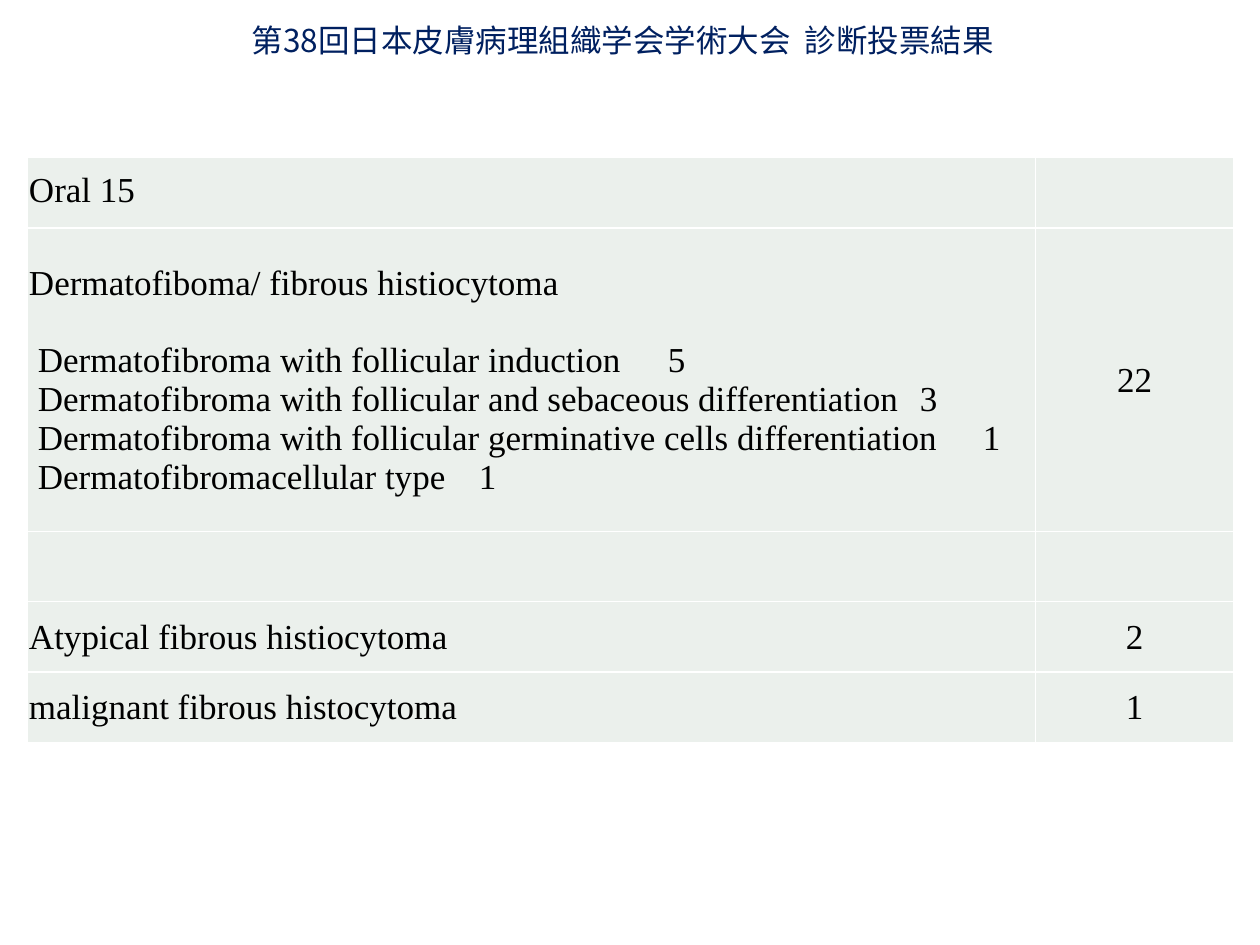
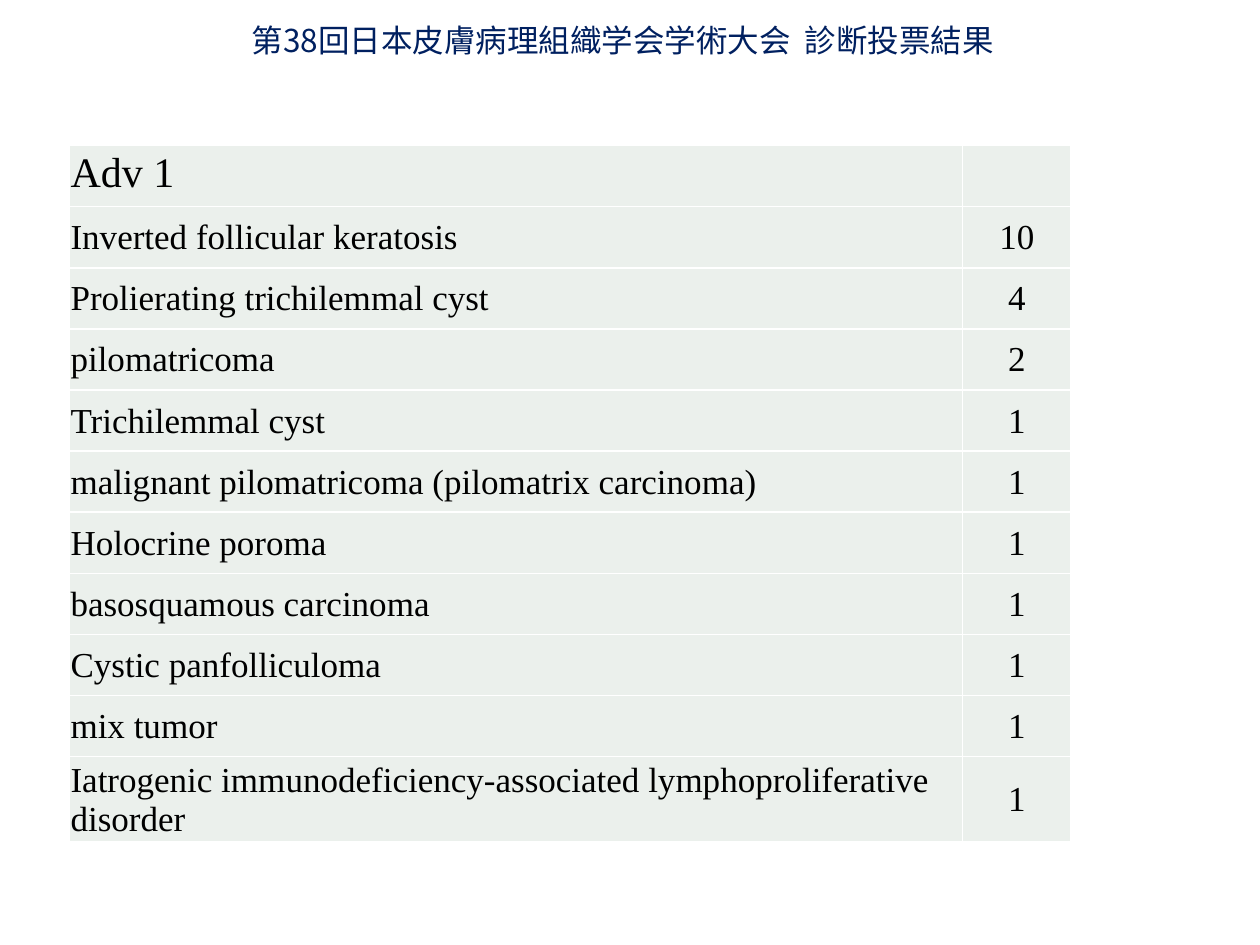
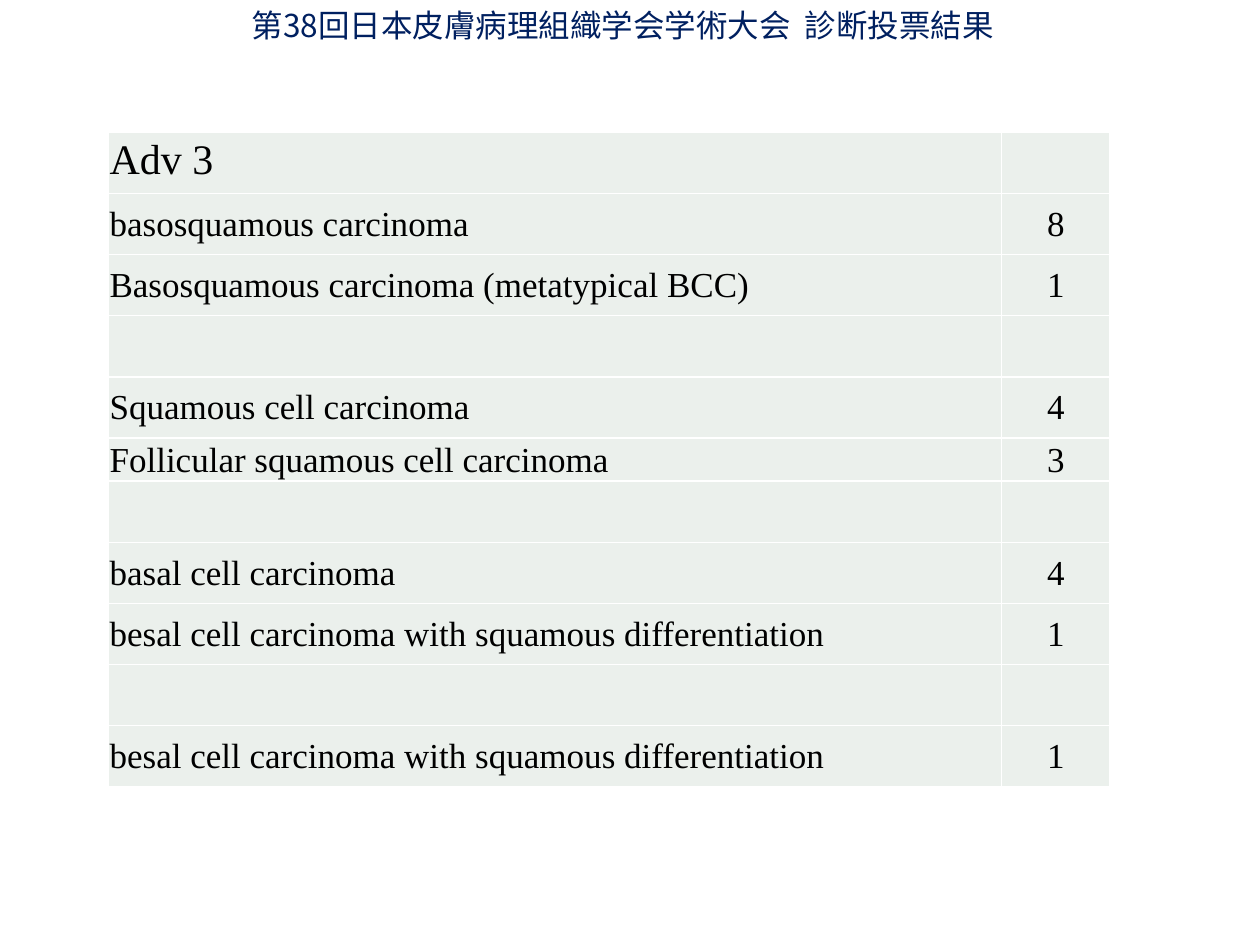
"""Builds the voting result slides: one shared title and one table per case."""
from dataclasses import dataclass

import pptx
import pptx.dml.color
import pptx.enum.text
import pptx.oxml
import pptx.oxml.ns
import pptx.util

COLORS = {"title": "002060", "text": "000000", "cell": "EBF0EC", "border": "FFFFFF"}
TITLE = "第38回日本皮膚病理組織学会学術大会  診断投票結果"
TITLE_FONT, TABLE_FONT = "Noto Sans CJK JP", "Times New Roman"
SLIDE_WIDTH, SLIDE_HEIGHT = pptx.util.Inches(10), pptx.util.Inches(7.5)
GRID = 100
BODY_SIZE = 20
SUBTYPE_GAP = 22
SUBTYPE_INDENT = 0.7
SUBTYPE_COUNT_STOP = 75.3
CELL_MARGIN = 0.1


@dataclass
class Diagnosis:
    name: str = ""
    votes: str = ""
    height: float = 6.47
    subtypes: tuple[tuple[str, int], ...] = ()


@dataclass
class Ballot:
    case: Diagnosis
    case_size: int
    title_top: float
    left: float
    top: float
    columns: tuple[float, float]
    diagnoses: list[Diagnosis]


ORAL_ROW = 7.44
ADVANCED_COLUMNS = (70.9, 8.6)

BALLOTS = [
    Ballot(Diagnosis("Oral 15", height=ORAL_ROW), 20, 1.6, 2.2, 16.67, (80, 15.7), [
        Diagnosis("Dermatofiboma/ fibrous histiocytoma", "22", 32.13, (
            ("Dermatofibroma with follicular induction", 5),
            ("Dermatofibroma with follicular and sebaceous differentiation", 3),
            ("Dermatofibroma with follicular germinative cells differentiation", 1),
            ("Dermatofibromacellular type", 1),
        )),
        Diagnosis(height=ORAL_ROW),
        Diagnosis("Atypical fibrous histiocytoma", "2", ORAL_ROW),
        Diagnosis("malignant fibrous histocytoma", "1", ORAL_ROW),
    ]),
    Ballot(Diagnosis("Adv 1"), 24, 1.6, 5.5, 15.4, ADVANCED_COLUMNS, [
        Diagnosis("Inverted follicular keratosis", "10"),
        Diagnosis("Prolierating trichilemmal cyst", "4"),
        Diagnosis("pilomatricoma", "2"),
        Diagnosis("Trichilemmal cyst", "1"),
        Diagnosis("malignant pilomatricoma (pilomatrix carcinoma)", "1"),
        Diagnosis("Holocrine poroma", "1"),
        Diagnosis("basosquamous carcinoma", "1"),
        Diagnosis("Cystic panfolliculoma", "1"),
        Diagnosis("mix tumor", "1"),
        Diagnosis("Iatrogenic immunodeficiency-associated lymphoproliferative disorder", "1"),
    ]),
    Ballot(Diagnosis("Adv 3"), 24, 0, 8.6, 14, ADVANCED_COLUMNS, [
        Diagnosis("basosquamous carcinoma", "8"),
        Diagnosis("Basosquamous carcinoma (metatypical BCC)", "1"),
        Diagnosis(),
        Diagnosis("Squamous cell carcinoma", "4"),
        Diagnosis("Follicular squamous cell carcinoma", "3", 2.13),
        Diagnosis(),
        Diagnosis("basal cell carcinoma", "4"),
        Diagnosis("besal cell carcinoma with squamous differentiation", "1"),
        Diagnosis(),
        Diagnosis("besal cell carcinoma with squamous differentiation", "1"),
    ]),
]


def across(columns: float) -> int:
    """Turns grid columns into a length."""
    return round(SLIDE_WIDTH * columns / GRID)


def down(rows: float) -> int:
    """Turns grid rows into a length."""
    return round(SLIDE_HEIGHT * rows / GRID)


def write(para, text: str, size: int, font: str, color: str) -> None:
    """Writes one styled paragraph."""
    para.text = text
    for span in para.runs:
        span.font.size = pptx.util.Pt(size)
        span.font.name = font
        span.font.color.rgb = pptx.dml.color.RGBColor.from_string(COLORS[color])
        east_asian = pptx.oxml.parse_xml(
            f'<a:ea {pptx.oxml.ns.nsdecls("a")} typeface="{font}"/>')
        span.font.element.append(east_asian) if hasattr(span.font, "element") else \
            span._r.get_or_add_rPr().append(east_asian)


def add_title(page, top: float) -> None:
    """Adds the shared title."""
    box = page.shapes.add_textbox(across(19), down(top), across(62), down(5.33))
    box.text_frame.word_wrap = True
    write(box.text_frame.paragraphs[0], TITLE, 18, TITLE_FONT, "title")


def style_cell(cell) -> None:
    """Gives a cell its border and fill."""
    properties = cell._tc.get_or_add_tcPr()
    for side in "LRTB":
        properties.append(pptx.oxml.parse_xml(
            f'<a:ln{side} {pptx.oxml.ns.nsdecls("a")} w="{pptx.util.Pt(1)}"><a:solidFill>'
            f'<a:srgbClr val="{COLORS["border"]}"/></a:solidFill></a:ln{side}>'))
    cell.fill.solid()
    cell.fill.fore_color.rgb = pptx.dml.color.RGBColor.from_string(COLORS["cell"])


def fill_cell(cell, text: str, size: int, bottom: float = 0) -> None:
    """Writes the text of a cell, set tight to its edges."""
    cell.margin_left = cell.margin_right = cell.margin_top = across(CELL_MARGIN)
    cell.margin_bottom = across(bottom)
    cell.vertical_anchor = pptx.enum.text.MSO_ANCHOR.MIDDLE
    write(cell.text_frame.paragraphs[0], text, size, TABLE_FONT, "text")


def add_subtypes(cell, subtypes: tuple[tuple[str, int], ...]) -> None:
    """Lists subtypes with their counts at a right tab stop."""
    for index, (name, count) in enumerate(subtypes):
        para = cell.text_frame.add_paragraph()
        write(para, f"{name}\t{count}", BODY_SIZE, TABLE_FONT, "text")
        if index == 0:
            para.space_before = pptx.util.Pt(SUBTYPE_GAP)
        properties = para._p.get_or_add_pPr()
        properties.set("marL", str(across(SUBTYPE_INDENT)))
        properties.set("indent", "0")
        properties.append(pptx.oxml.parse_xml(
            f'<a:tabLst {pptx.oxml.ns.nsdecls("a")}>'
            f'<a:tab pos="{across(SUBTYPE_COUNT_STOP)}" algn="r"/></a:tabLst>'))


def add_ballot(page, ballot: Ballot) -> None:
    """Adds the table of one case."""
    entries = [ballot.case, *ballot.diagnoses]
    table = page.shapes.add_table(
        len(entries), len(ballot.columns), across(ballot.left), down(ballot.top),
        across(sum(ballot.columns)), down(sum(entry.height for entry in entries))).table
    table.first_row = table.horz_banding = False
    for column, width in zip(table.columns, ballot.columns):
        column.width = across(width)
    for row, entry in zip(table.rows, entries):
        row.height = down(entry.height)
        name_cell, votes_cell = row.cells
        style_cell(name_cell)
        style_cell(votes_cell)
        if entry is ballot.case:
            fill_cell(name_cell, entry.name, ballot.case_size, 0.5)
        elif entry.name:
            fill_cell(name_cell, entry.name, BODY_SIZE)
            add_subtypes(name_cell, entry.subtypes)
            fill_cell(votes_cell, entry.votes, BODY_SIZE)
            votes_cell.text_frame.paragraphs[0].alignment = pptx.enum.text.PP_ALIGN.CENTER


def main() -> None:
    """Builds and saves the deck."""
    deck = pptx.Presentation()
    deck.slide_width, deck.slide_height = SLIDE_WIDTH, SLIDE_HEIGHT
    for ballot in BALLOTS:
        page = deck.slides.add_slide(deck.slide_layouts[6])
        add_title(page, ballot.title_top)
        add_ballot(page, ballot)
    deck.save("out.pptx")


if __name__ == "__main__":
    main()
